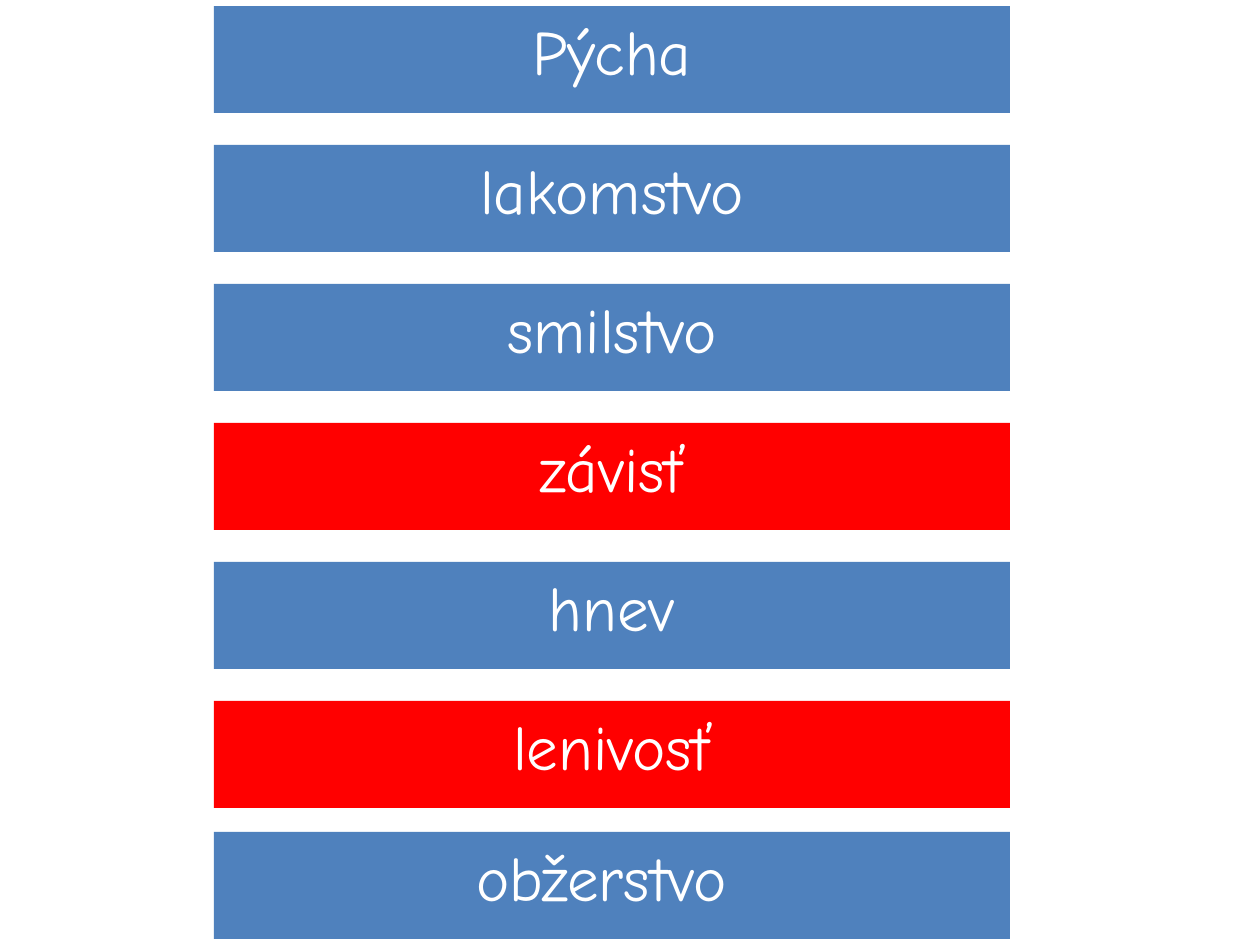
"""Build a slide listing the seven deadly sins as stacked bars, two of them in red."""
from dataclasses import dataclass

from pptx import Presentation
from pptx.dml.color import RGBColor
from pptx.enum.shapes import MSO_SHAPE
from pptx.enum.text import MSO_ANCHOR, PP_ALIGN
from pptx.util import Emu, Pt


@dataclass(frozen=True)
class Theme:
    blue: str = "4F81BD"
    red: str = "FF0000"
    white: str = "FFFFFF"
    font: str = "Comic Neue"
    size: int = 36


THEME = Theme()
PX_PER_INCH = 126
LEFT, TOP, WIDTH, HEIGHT = 214, 6, 796, 107
PITCH = 139
LAST_TOP = 832


def px(length):
    return Emu(round(length * 914400 / PX_PER_INCH))


def write(frame, text, *, font, size, color, align):
    frame.word_wrap = True
    frame.vertical_anchor = MSO_ANCHOR.TOP
    paragraph = frame.paragraphs[0]
    paragraph.alignment = align
    run = paragraph.add_run()
    run.text = text
    run.font.name = font
    run.font.size = Pt(size)
    run.font.color.rgb = RGBColor.from_string(color)


deck = Presentation()
deck.slide_width, deck.slide_height = px(1260), px(945)
slide = deck.slides.add_slide(deck.slide_layouts[6])

sins = [
    ("Pýcha", THEME.blue),
    ("lakomstvo", THEME.blue),
    ("smilstvo", THEME.blue),
    ("závisť", THEME.red),
    ("hnev", THEME.blue),
    ("lenivosť", THEME.red),
    ("obžerstvo ", THEME.blue),
]
tops = [TOP + PITCH * row for row in range(len(sins) - 1)] + [LAST_TOP]

for (sin, color), top in zip(sins, tops):
    bar = slide.shapes.add_shape(
        MSO_SHAPE.RECTANGLE, px(LEFT), px(top), px(WIDTH), px(HEIGHT)
    )
    bar.shadow.inherit = False
    bar.fill.solid()
    bar.fill.fore_color.rgb = RGBColor.from_string(color)
    bar.line.fill.background()
    write(
        bar.text_frame, sin, font=THEME.font, size=THEME.size,
        color=THEME.white, align=PP_ALIGN.CENTER,
    )

deck.save("out.pptx")
